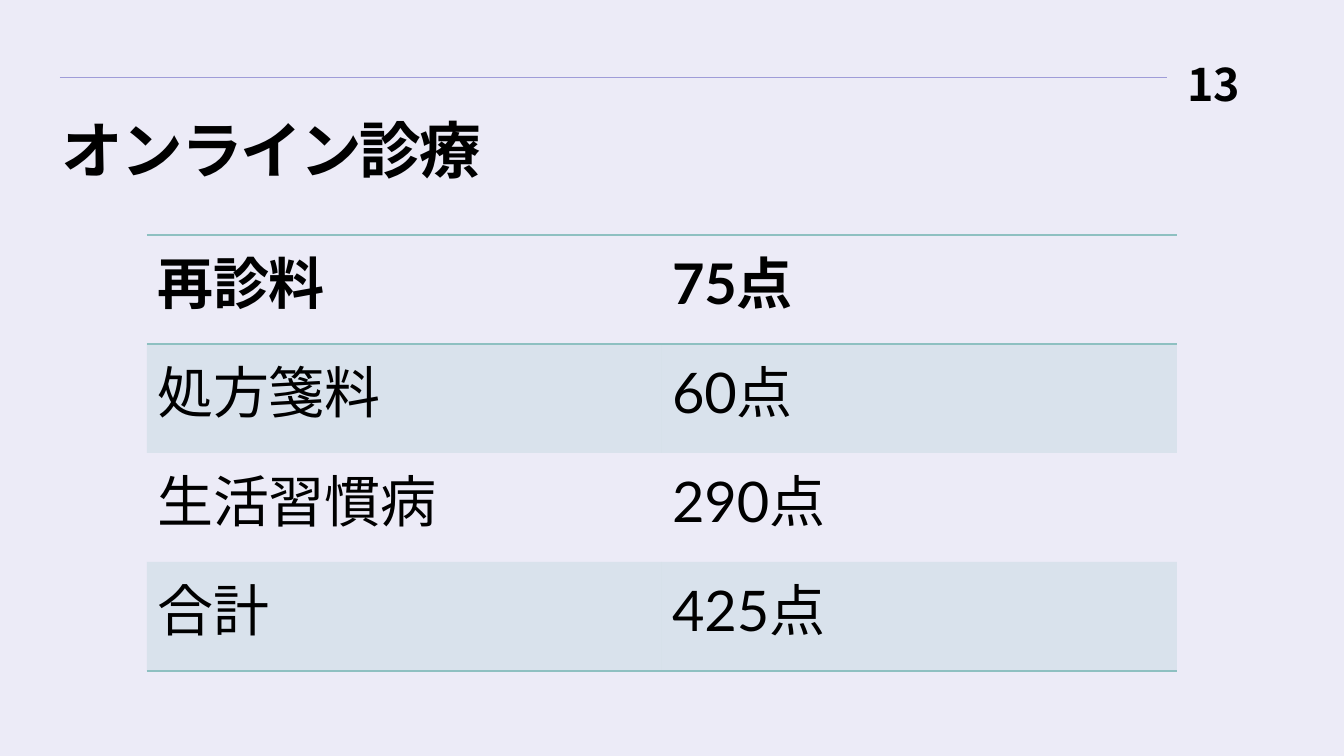
from lxml.etree import SubElement
from pptx import Presentation
from pptx.dml.color import RGBColor
from pptx.enum.lang import MSO_LANGUAGE_ID
from pptx.enum.shapes import MSO_CONNECTOR
from pptx.enum.text import MSO_ANCHOR, MSO_AUTO_SIZE, PP_ALIGN
from pptx.oxml import parse_xml
from pptx.oxml.ns import nsdecls, qn
from pptx.util import Emu, Pt

EMU_PER_PX = 914400 / 100.8
COLORS = {"background": "ECEBF7", "rule": "9F9CD8", "table": "8EC0C1", "text": "000000"}
JAPANESE_FONT = "Noto Sans CJK JP"
TABLE_FONT = "Lato"
PLAIN_TABLE_STYLE = "{2D5ABB26-0587-4C30-8999-92F81FD0307C}"
FEES = [("再診料", "75点"), ("処方箋料", "60点"), ("生活習慣病", "290点"), ("合計", "425点")]


def px(length):
    return Emu(round(length * EMU_PER_PX))


def color(name):
    return RGBColor.from_string(COLORS[name])


def apply(target, values):
    for name, value in values.items():
        setattr(target, name, value)


class SlideBuilder:
    def __init__(self, presentation):
        self.slide = presentation.slides.add_slide(presentation.slide_layouts[5])
        fill = self.slide.background.fill
        fill.solid()
        fill.fore_color.rgb = color("background")

    def add_text(self, frame, text, size, bold=True, font_name=JAPANESE_FONT,
                 spacing=None, **paragraph_format):
        paragraph = frame.paragraphs[0]
        apply(paragraph, paragraph_format)
        run = paragraph.add_run()
        run.text = text
        apply(run.font, {"size": Pt(size), "bold": bold, "name": font_name,
                         "language_id": MSO_LANGUAGE_ID.JAPANESE})
        run.font.color.rgb = color("text")
        properties = run._r.get_or_add_rPr()
        SubElement(properties, qn("a:ea"), typeface=JAPANESE_FONT)
        if spacing is not None:
            properties.set("spc", str(spacing))

    def title(self, text, left, top, width, height):
        shape = self.slide.shapes.title
        apply(shape, {"left": px(left), "top": px(top),
                      "width": px(width), "height": px(height)})
        apply(shape.text_frame, {"margin_left": 0, "margin_top": px(5),
                                 "margin_right": px(10), "margin_bottom": px(5),
                                 "vertical_anchor": MSO_ANCHOR.TOP, "word_wrap": True,
                                 "auto_size": MSO_AUTO_SIZE.NONE})
        self.add_text(shape.text_frame, text, 44, spacing=-150,
                      alignment=PP_ALIGN.LEFT, line_spacing=0.8)

    def page_number(self, text, left, top, width, height):
        frame = self.slide.shapes.add_textbox(
            px(left), px(top), px(width), px(height)).text_frame
        apply(frame, {"margin_left": 0, "margin_top": 0, "margin_right": 0,
                      "margin_bottom": 0, "word_wrap": True,
                      "vertical_anchor": MSO_ANCHOR.MIDDLE})
        self.add_text(frame, text, 32, alignment=PP_ALIGN.RIGHT)

    def rule(self, left, right, top):
        connector = self.slide.shapes.add_connector(
            MSO_CONNECTOR.STRAIGHT, px(left), px(top), px(right), px(top))
        connector.line.color.rgb = color("rule")
        connector.line.width = Pt(0.75)
        SubElement(connector._element.spPr, qn("a:effectLst"))

    def borders(self, cell, sides):
        properties = cell._tc.get_or_add_tcPr()
        for index, side in enumerate(sides):
            properties.insert(index, parse_xml(
                f'<a:ln{side} {nsdecls("a")} w="12700"><a:solidFill>'
                f'<a:srgbClr val="{COLORS["table"]}"/></a:solidFill></a:ln{side}>'))

    def shade(self, cell, opacity):
        cell.fill.solid()
        cell.fill.fore_color.rgb = color("table")
        tint = cell._tc.get_or_add_tcPr().find(".//" + qn("a:srgbClr"))
        SubElement(tint, qn("a:alpha"), val=str(opacity * 1000))

    def table(self, rows, left, top, column_width, row_height):
        column_count = len(rows[0])
        table = self.slide.shapes.add_table(
            len(rows), column_count, px(left), px(top),
            px(column_width * column_count), px(row_height * len(rows))).table
        apply(table, {"first_row": False, "horz_banding": False})
        table._tbl.tblPr.find(qn("a:tableStyleId")).text = PLAIN_TABLE_STYLE
        border_sides = {0: "TB", len(rows) - 1: "B"}
        for row, values in enumerate(rows):
            for column, value in enumerate(values):
                cell = table.cell(row, column)
                self.add_text(cell.text_frame, value, 40, row == 0, TABLE_FONT)
                if row % 2:
                    self.shade(cell, 20)
                else:
                    cell.fill.background()
                self.borders(cell, border_sides.get(row, ""))


def main():
    presentation = Presentation()
    apply(presentation, {"slide_width": px(1344), "slide_height": px(756)})
    builder = SlideBuilder(presentation)
    builder.rule(60, 1167, 78)
    builder.title("オンライン診療", 62, 121, 1223, 133)
    builder.page_number("13", 1140, 57, 100, 53)
    builder.table(FEES, 147, 235, 515, 109)
    presentation.save("out.pptx")


if __name__ == "__main__":
    main()
